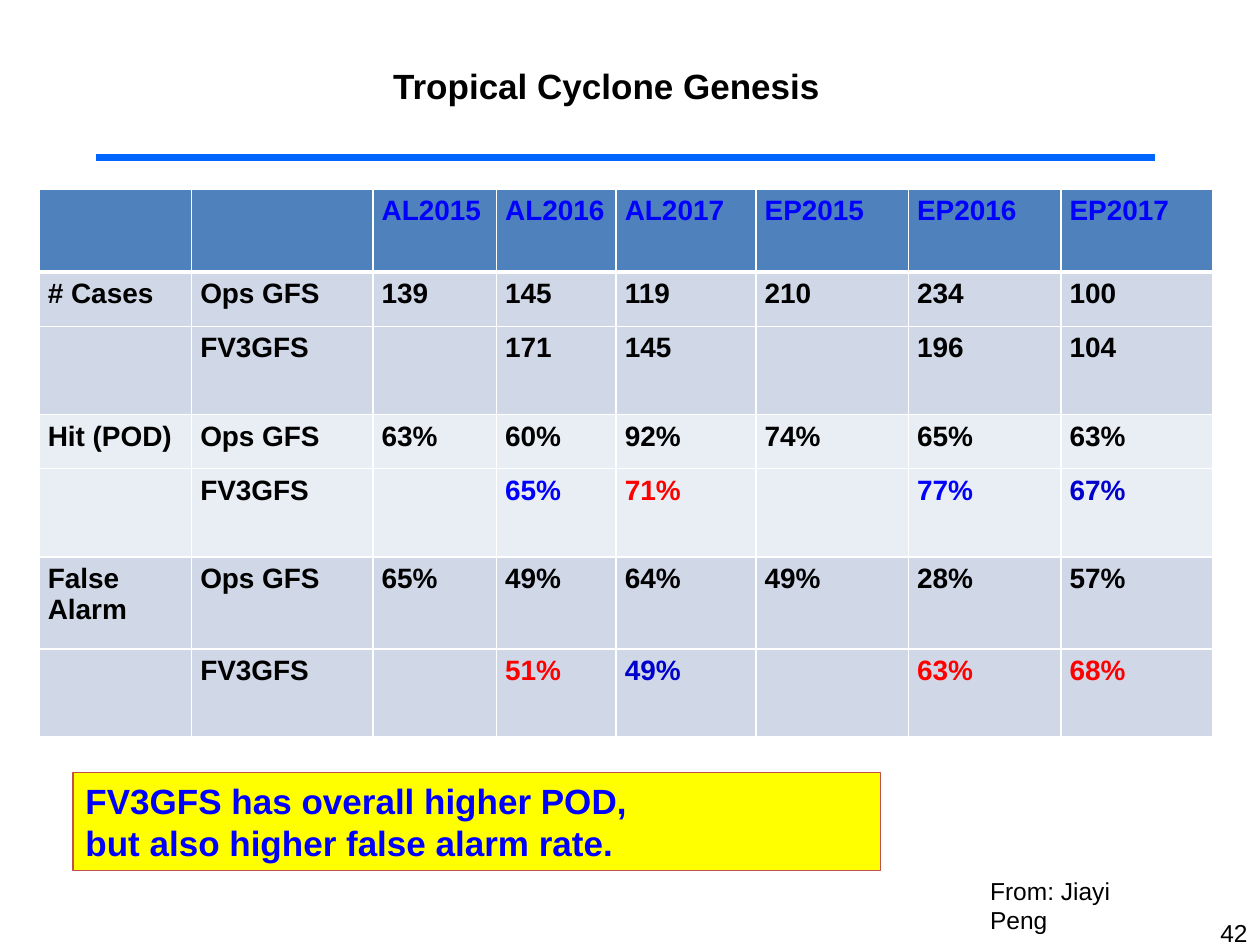
import dataclasses
import pptx
import pptx.dml.color
import pptx.enum.shapes
import pptx.enum.text
import pptx.oxml
import pptx.oxml.ns
import pptx.util

Inches = pptx.util.Inches
Pt = pptx.util.Pt
Align = pptx.enum.text.PP_ALIGN


def color(code):
    return pptx.dml.color.RGBColor.from_string(code)


@dataclasses.dataclass(frozen=True)
class Theme:
    face: str = "Arial"
    black: str = "000000"
    white: str = "FFFFFF"
    blue: str = "0000FF"
    navy: str = "0000CC"
    red: str = "FF0000"
    rule: str = "0066FF"
    head: str = "4F81BD"
    dark: str = "D0D8E8"
    light: str = "E9EDF4"
    note: str = "FFFF00"
    edge: str = "C0504D"
    large: int = 20
    table: int = 16
    small: int = 14


class Page:
    """Holds the style and the slide being drawn."""

    def __init__(self, slide, theme):
        self.slide = slide
        self.theme = theme

    def words(self, frame, lines, size, ink, bold=False, align=Align.LEFT):
        frame.text = "\n".join(lines)
        for para in frame.paragraphs:
            para.alignment = align
            font = para.font
            font.name, font.size, font.bold = self.theme.face, Pt(size), bold
            font.color.rgb = color(ink)

    def title(self, text, box):
        shape = self.slide.shapes.title
        shape.left, shape.top, shape.width, shape.height = map(Inches, box)
        frame = shape.text_frame
        frame.word_wrap = False
        frame.vertical_anchor = pptx.enum.text.MSO_ANCHOR.TOP
        self.words(frame, [text], self.theme.large, self.theme.black, True)

    def label(self, text, box, align=Align.LEFT):
        frame = self.slide.shapes.add_textbox(*map(Inches, box)).text_frame
        frame.word_wrap = True
        self.words(frame, [text], self.theme.small, self.theme.black, align=align)

    def rule(self, left, right, top):
        line = self.slide.shapes.add_connector(
            pptx.enum.shapes.MSO_CONNECTOR.STRAIGHT,
            Inches(left), Inches(top), Inches(right), Inches(top))
        line.line.color.rgb = color(self.theme.rule)
        line.line.width = Pt(4.5)
        props = line._element.spPr
        props.append(pptx.oxml.parse_xml(
            f'<a:effectLst {pptx.oxml.ns.nsdecls("a")}/>'))

    def note(self, lines, box):
        shape = self.slide.shapes.add_shape(
            pptx.enum.shapes.MSO_SHAPE.RECTANGLE, *map(Inches, box))
        shape.shadow.inherit = False
        shape.fill.solid()
        shape.fill.fore_color.rgb = color(self.theme.note)
        shape.line.color.rgb = color(self.theme.edge)
        shape.line.width = Pt(0.75)
        self.words(shape.text_frame, lines, self.theme.large, self.theme.blue, True)

    def border(self, cell, top, bottom):
        props = cell._tc.get_or_add_tcPr()
        sides = {"lnL": 1, "lnR": 1, "lnT": top, "lnB": bottom}
        for spot, (side, width) in enumerate(sides.items()):
            props.insert(spot, pptx.oxml.parse_xml(
                f'<a:{side} {pptx.oxml.ns.nsdecls("a")} w="{Pt(width)}">'
                f'<a:solidFill><a:srgbClr val="{self.theme.white}"/></a:solidFill>'
                f'</a:{side}>'))

    def table(self, rows, fills, inks, place, widths, heights):
        size = map(Inches, (*place, sum(widths), sum(heights)))
        grid = self.slide.shapes.add_table(len(rows), len(widths), *size).table
        for col, width in zip(grid.columns, widths):
            col.width = Inches(width)
        for row, height in zip(grid.rows, heights):
            row.height = Inches(height)
        for r, texts in enumerate(rows):
            base = self.theme.blue if r == 0 else self.theme.black
            for c, text in enumerate(texts):
                cell = grid.cell(r, c)
                cell.margin_left = cell.margin_right = Inches(0.07)
                cell.fill.solid()
                cell.fill.fore_color.rgb = color(fills[r])
                self.border(cell, 3 if r == 1 else 1, 3 if r == 0 else 1)
                self.words(cell.text_frame, [text], self.theme.table,
                           inks.get((r, c), base), True)


def main():
    deck = pptx.Presentation()
    deck.slide_width, deck.slide_height = Inches(10), Inches(7.5)
    theme = Theme()
    page = Page(deck.slides.add_slide(deck.slide_layouts[5]), theme)

    # Page number, heading and rule
    page.label("42", (7.67, 7.24, 2.33, 0.52), Align.RIGHT)
    page.rule(0.76, 9.17, 1.25)
    page.title("Tropical Cyclone Genesis", (3.02, 0.46, 3.6, 0.43))

    # Conclusion and credit
    page.note(["FV3GFS has overall higher POD,",
               "but also higher false alarm rate."], (0.58, 6.13, 6.41, 0.78))
    page.label("From: Jiayi Peng", (7.76, 6.9, 1.64, 0.33))

    # Scores by basin and year
    rows = [
        ["", "", "AL2015", "AL2016", "AL2017", "EP2015", "EP2016", "EP2017"],
        ["# Cases", "Ops GFS", "139", "145", "119", "210", "234", "100"],
        ["", "FV3GFS", "", "171", "145", "", "196", "104"],
        ["Hit (POD)", "Ops GFS", "63%", "60%", "92%", "74%", "65%", "63%"],
        ["", "FV3GFS", "", "65%", "71%", "", "77%", "67%"],
        ["False Alarm", "Ops GFS", "65%", "49%", "64%", "49%", "28%", "57%"],
        ["", "FV3GFS", "", "51%", "49%", "", "63%", "68%"],
    ]
    fills = [theme.head] + [theme.dark] * 2 + [theme.light] * 2 + [theme.dark] * 2
    # Better scores are blue or navy, worse ones red
    inks = {(4, 3): theme.blue, (4, 4): theme.red,
            (4, 6): theme.blue, (4, 7): theme.navy,
            (6, 3): theme.red, (6, 4): theme.navy,
            (6, 6): theme.red, (6, 7): theme.red}
    page.table(rows, fills, inks, (0.31, 1.5),
               [1.21, 1.44, 0.98, 0.95, 1.11, 1.21, 1.21, 1.21],
               [0.66, 0.43, 0.7, 0.43, 0.7, 0.73, 0.7])

    deck.save("out.pptx")


if __name__ == "__main__":
    main()
